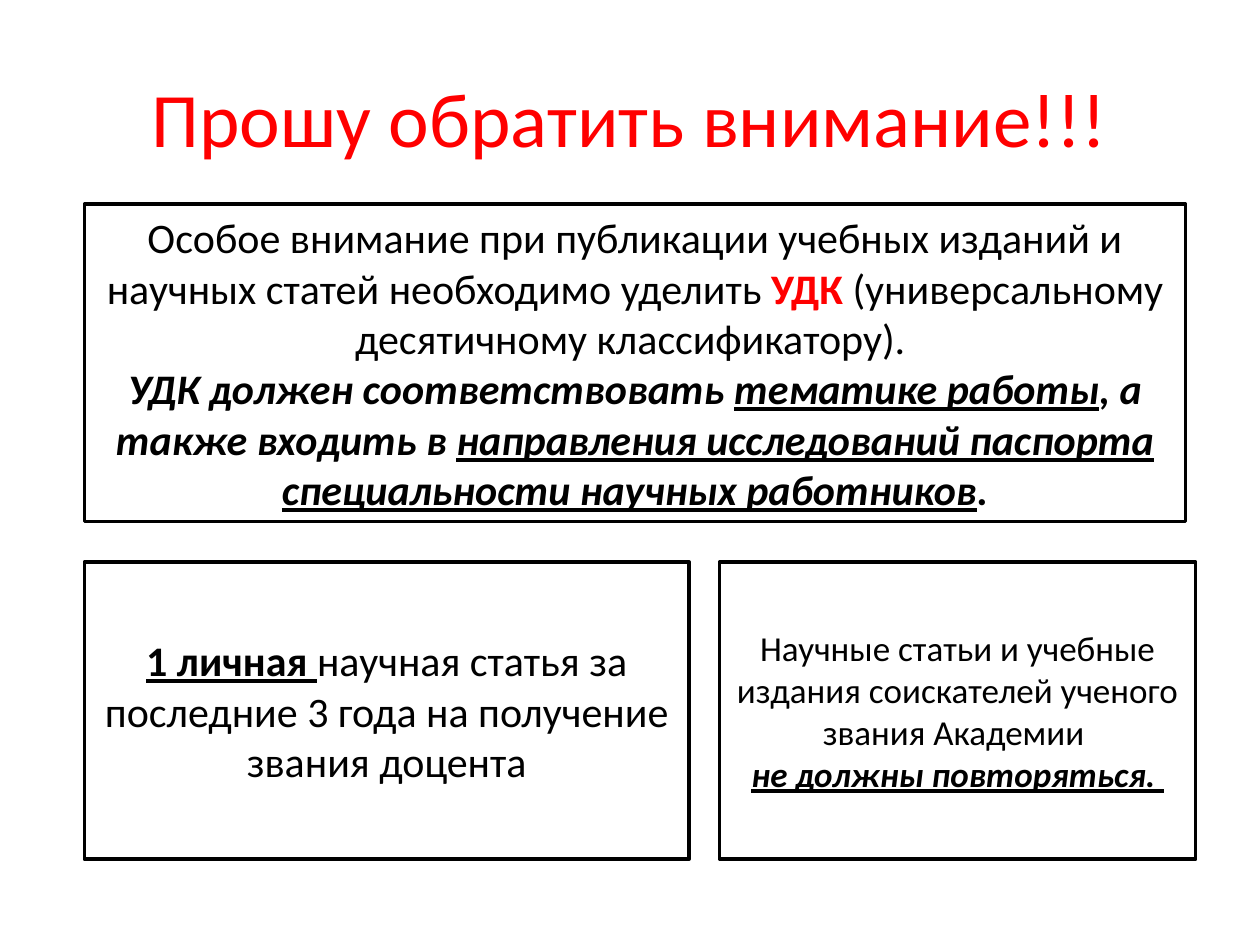
from dataclasses import dataclass

from pptx import Presentation
from pptx.dml.color import RGBColor
from pptx.enum.shapes import MSO_SHAPE
from pptx.enum.text import MSO_ANCHOR, PP_ALIGN
from pptx.util import Inches, Pt


@dataclass(frozen=True)
class Theme:
    font: str = "Calibri"
    ink: RGBColor = RGBColor(0, 0, 0)
    accent: RGBColor = RGBColor(255, 0, 0)
    paper: RGBColor = RGBColor(255, 255, 255)
    title_size: int = 44
    large_size: int = 24
    small_size: int = 20
    border: int = 2


THEME = Theme()

# Each paragraph is a list of (text, style); style letters:
# b bold, i italic, u underlined, r red
TITLE = [[("Прошу обратить внимание!!!", "r")]]
UDC_RULE = [
    [
        ("Особое внимание при публикации учебных изданий и научных статей необходимо уделить ", ""),
        ("УДК", "br"),
        (" (универсальному десятичному классификатору). ", ""),
    ],
    [
        ("УДК должен соответствовать ", "bi"),
        ("тематике работы", "biu"),
        (", а также входить в ", "bi"),
        ("направления исследований паспорта специальности научных работников", "biu"),
        (".", "bi"),
    ],
]
PERSONAL_ARTICLE = [
    [
        ("1 личная ", "bu"),
        ("научная статья за последние 3 года на получение звания доцента", ""),
    ],
]
NO_REPEATS = [
    [("Научные статьи и учебные издания соискателей ученого звания Академии ", "")],
    [("не должны повторяться. ", "biu")],
]

LEFT = 0.67
LOWER_TOP, LOWER_HEIGHT = 4.46, 2.36
ARTICLE_WIDTH, GAP = 4.8, 0.24

# (paragraphs, type size, (left, top, width, height))
BOXES = [
    (UDC_RULE, THEME.large_size, (LEFT, 1.62, 8.74, 2.52)),
    (PERSONAL_ARTICLE, THEME.large_size, (LEFT, LOWER_TOP, ARTICLE_WIDTH, LOWER_HEIGHT)),
    (NO_REPEATS, THEME.small_size,
     (LEFT + ARTICLE_WIDTH + GAP, LOWER_TOP, 3.78, LOWER_HEIGHT)),
]


def write_text(shape, paragraphs, size):
    frame = shape.text_frame
    frame.word_wrap = True
    frame.vertical_anchor = MSO_ANCHOR.MIDDLE
    frame.text = "\n".join("" for _ in paragraphs)
    for paragraph, pieces in zip(frame.paragraphs, paragraphs):
        paragraph.alignment = PP_ALIGN.CENTER
        for text, style in pieces:
            run = paragraph.add_run()
            run.text = text
            font = run.font
            font.name = THEME.font
            font.size = Pt(size)
            font.bold = "b" in style
            font.italic = "i" in style
            font.underline = "u" in style
            font.color.rgb = THEME.accent if "r" in style else THEME.ink


def add_title(slide):
    title = slide.shapes.add_textbox(Inches(0.5), Inches(0.3), Inches(9), Inches(1.25))
    write_text(title, TITLE, THEME.title_size)


def add_box(slide, paragraphs, size, place):
    box = slide.shapes.add_shape(MSO_SHAPE.RECTANGLE, *map(Inches, place))
    box.shadow.inherit = False
    box.fill.solid()
    box.fill.fore_color.rgb = THEME.paper
    box.line.color.rgb = THEME.ink
    box.line.width = Pt(THEME.border)
    write_text(box, paragraphs, size)


def main():
    presentation = Presentation()
    presentation.slide_width = Inches(10)
    presentation.slide_height = Inches(7.5)
    slide = presentation.slides.add_slide(presentation.slide_layouts[6])
    add_title(slide)
    for paragraphs, size, place in BOXES:
        add_box(slide, paragraphs, size, place)
    presentation.save("out.pptx")


if __name__ == "__main__":
    main()
